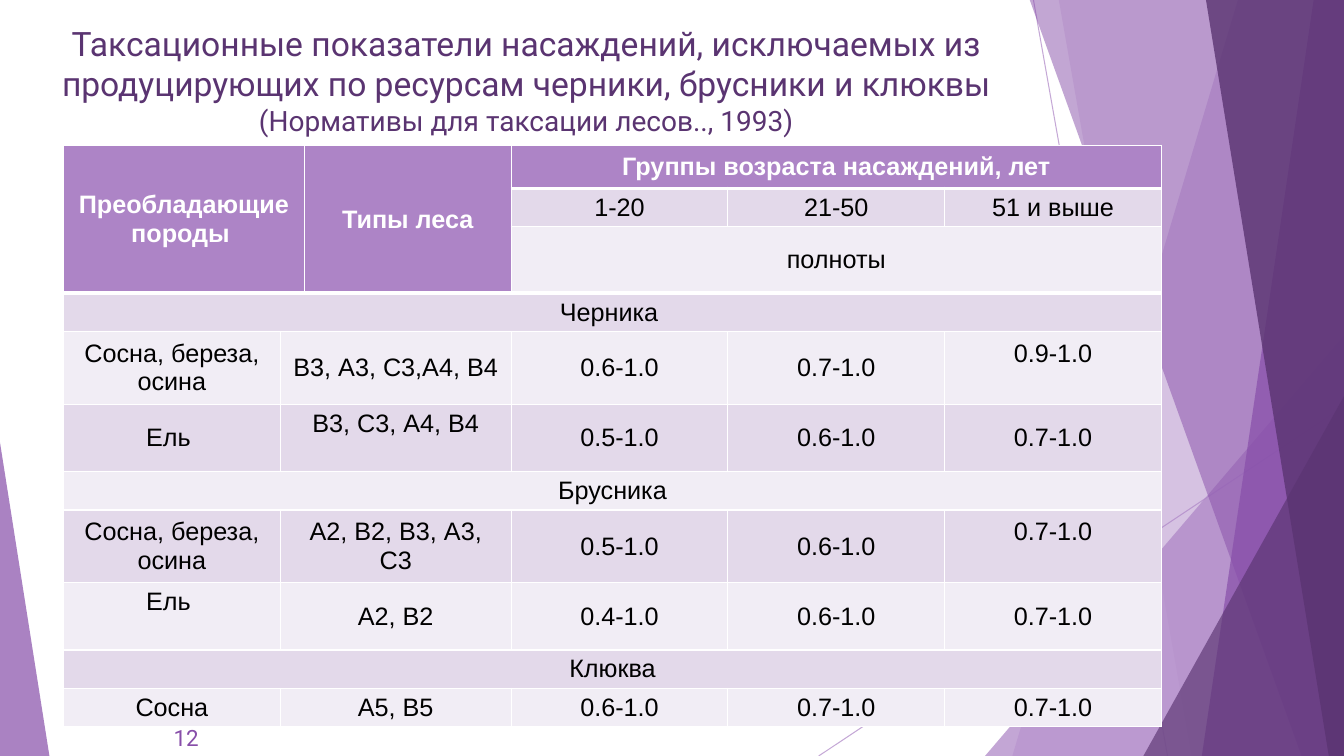
from lxml.etree import SubElement as Sub
from pptx import Presentation
from pptx.dml.color import RGBColor as Rgb
from pptx.enum.shapes import MSO_CONNECTOR as Conn, MSO_SHAPE as Kind
from pptx.enum.text import MSO_ANCHOR as Anchor, PP_ALIGN as Align
from pptx.oxml.ns import qn
from pptx.util import Inches, Pt

HUES = {
    "lilac": "AD84C6", "violet": "874EA9", "plum": "5A3471",
    "white": "FFFFFF", "black": "000000", "dark": "E3D9EA", "light": "F1EDF5",
}
SIDES = ("lnL", "lnR", "lnT", "lnB")
COLS = (2.15, 0.24, 2.05, 2.15, 2.15, 2.15)
ROWS = (0.43, 0.38, 0.66, 0.38, 0.72, 0.67, 0.38, 0.72, 0.67, 0.38, 0.38)
HEADS = (
    (0, 0, 3, 2, "Преобладающие породы "),
    (0, 2, 3, 1, "Типы леса"),
    (0, 3, 1, 3, "Группы возраста насаждений, лет"),
)
AGES = ("1-20", "21-50", "51 и выше")
BODY = (
    ("Черника ",),
    ("Сосна, береза, осина", "В3, А3, С3,А4, В4", "0.6-1.0", "0.7-1.0", "0.9-1.0"),
    ("Ель ", "В3, С3, А4, В4", "0.5-1.0", "0.6-1.0", "0.7-1.0"),
    ("Брусника",),
    ("Сосна, береза, осина", "А2, В2, В3, А3, С3", "0.5-1.0", "0.6-1.0", "0.7-1.0"),
    ("Ель ", "А2, В2", "0.4-1.0", "0.6-1.0", "0.7-1.0"),
    ("Клюква",),
    ("Сосна", "А5, В5", "0.6-1.0", "0.7-1.0", "0.7-1.0"),
)
SLOTS = (0, 1, 3, 4, 5)
RAISED = {(4, 5), (5, 1), (7, 5), (8, 0)}
PAD, LIFT = 0.03, 0.29


def fade(node, share):
    tone = next(node.iter(qn("a:srgbClr")))
    Sub(tone, qn("a:alpha"), val=str(share * 1000))


def paint(shape, hue, share):
    shape.shadow.inherit = False
    shape.fill.solid()
    shape.fill.fore_color.rgb = Rgb.from_string(HUES[hue])
    shape.line.fill.background()
    fade(shape.fill._xPr, share)


def add_run(para, text, size, font, hue, bold=False):
    run = para.add_run()
    run.text = text
    run.font.size = Pt(size)
    run.font.name = font
    run.font.bold = bold
    run.font.color.rgb = Rgb.from_string(HUES[hue])


def add_text(slide, box, runs, align, anchor):
    frame = slide.shapes.add_textbox(*map(Inches, box)).text_frame
    frame.word_wrap = True
    frame.vertical_anchor = anchor
    para = frame.paragraphs[0]
    para.alignment = align
    for text, size, hue in runs:
        add_run(para, text, size, "Roboto", hue)


def add_ray(slide, start, end):
    ray = slide.shapes.add_connector(Conn.STRAIGHT, *map(Inches, start + end))
    ray.line.color.rgb = Rgb.from_string(HUES["lilac"])
    ray.line.width = Pt(0.75)
    props = ray._element.spPr
    fade(props, 70)
    Sub(props, qn("a:effectLst"))


def add_band(slide, box, top, foot, hue, share):
    left, head, width, height = box
    right, base = left + width, head + height
    spots = [(top, head), (right, head), (right, base), (foot, base)]
    spots = [(Inches(x), Inches(y)) for x, y in spots]
    pen = slide.shapes.build_freeform(*spots[0])
    pen.add_line_segments(spots[1:], close=True)
    paint(pen.convert_to_shape(), hue, share)


def add_wedge(slide, box, tip, hue, share):
    wedge = slide.shapes.add_shape(Kind.ISOSCELES_TRIANGLE, *map(Inches, box))
    wedge.adjustments[0] = tip
    paint(wedge, hue, share)


def add_decor(slide, box):
    left, top, width, height = box
    right, base = left + width, top + height

    def band(head, foot, hue, share):
        area = (left, top - 0.01, width, height + 0.01)
        add_band(slide, area, left + head, left + foot, hue, share)

    def corner(wide, high, hue, share):
        add_wedge(slide, (right - wide, base - high, wide, high), 1, hue, share)

    add_ray(slide, (left + 10.25, top), (left + 11.58, base))
    add_ray(slide, (right, top + 4.03), (left + 8.12, base))
    band(12.28, 10.04, "lilac", 36)
    band(10.5, 11.82, "lilac", 20)
    corner(3.56, 4.17, "lilac", 72)
    band(10.21, 12.91, "violet", 50)
    band(13.03, 11.92, "violet", 70)
    band(11.96, 13.18, "plum", 80)
    corner(1.99, 3.57, "plum", 66)
    add_wedge(slide, (left, base - 3.11, 0.49, 3.11), 0, "violet", 70)


def edge(cell, foot):
    props = cell._tc.get_or_add_tcPr()
    for spot, side in enumerate(SIDES):
        width = foot if side == "lnB" else 1
        line = props.makeelement(qn("a:" + side), {"w": str(Pt(width))})
        Sub(Sub(line, qn("a:solidFill")), qn("a:srgbClr"), val=HUES["white"])
        props.insert(spot, line)


def set_cell(grid, row, col, text, deep=1, wide=1, head=False):
    cell = grid.cell(row, col)
    if deep * wide > 1:
        cell.merge(grid.cell(row + deep - 1, col + wide - 1))
    cell.vertical_anchor = Anchor.MIDDLE
    para = cell.text_frame.paragraphs[0]
    para.alignment = Align.CENTER
    add_run(para, text, 18, "Arial", "white" if head else "black", head)
    hue = "lilac" if head else "dark" if row % 2 else "light"
    for r in range(row, row + deep):
        for c in range(col, col + wide):
            part = grid.cell(r, c)
            part.margin_top = part.margin_bottom = Inches(PAD)
            part.fill.solid()
            part.fill.fore_color.rgb = Rgb.from_string(HUES[hue])
            edge(part, 3 if head else 1)
    if (row, col) in RAISED:
        cell.margin_bottom = Inches(PAD + LIFT)


def add_grid(slide, left, top):
    box = (left, top, sum(COLS), sum(ROWS))
    grid = slide.shapes.add_table(len(ROWS), len(COLS), *map(Inches, box)).table
    grid.first_row = grid.horz_banding = False
    for col, width in zip(grid.columns, COLS):
        col.width = Inches(width)
    for row, height in zip(grid.rows, ROWS):
        row.height = Inches(height)
    for row, col, deep, wide, text in HEADS:
        set_cell(grid, row, col, text, deep, wide, True)
    for col, age in enumerate(AGES, 3):
        set_cell(grid, 1, col, age)
    set_cell(grid, 2, 3, "полноты", wide=3)
    for row, texts in enumerate(BODY, 3):
        if len(texts) == 1:
            set_cell(grid, row, 0, texts[0], wide=len(COLS))
            continue
        for col, text in zip(SLOTS, texts):
            set_cell(grid, row, col, text, wide=2 if col == 1 else 1)


def main():
    deck = Presentation()
    deck.slide_width, deck.slide_height = Inches(13.33), Inches(7.5)
    slide = deck.slides.add_slide(deck.slide_layouts[6])
    add_decor(slide, (0, 0, 13.33, 7.5))
    title = (
        ("Таксационные показатели насаждений, исключаемых из продуцирующих "
         "по ресурсам черники, брусники и клюквы ", 24, "plum"),
        ("(Нормативы для таксации лесов.., 1993)", 20, "plum"),
    )
    add_text(slide, (0.3, 0.18, 9.84, 1.44), title, Align.CENTER, Anchor.TOP)
    add_grid(slide, 0.63, 1.44)
    number = (("12", 16, "violet"),)
    add_text(slide, (1.32, 7.12, 0.75, 0.4), number, Align.RIGHT, Anchor.MIDDLE)
    deck.save("out.pptx")


if __name__ == "__main__":
    main()
